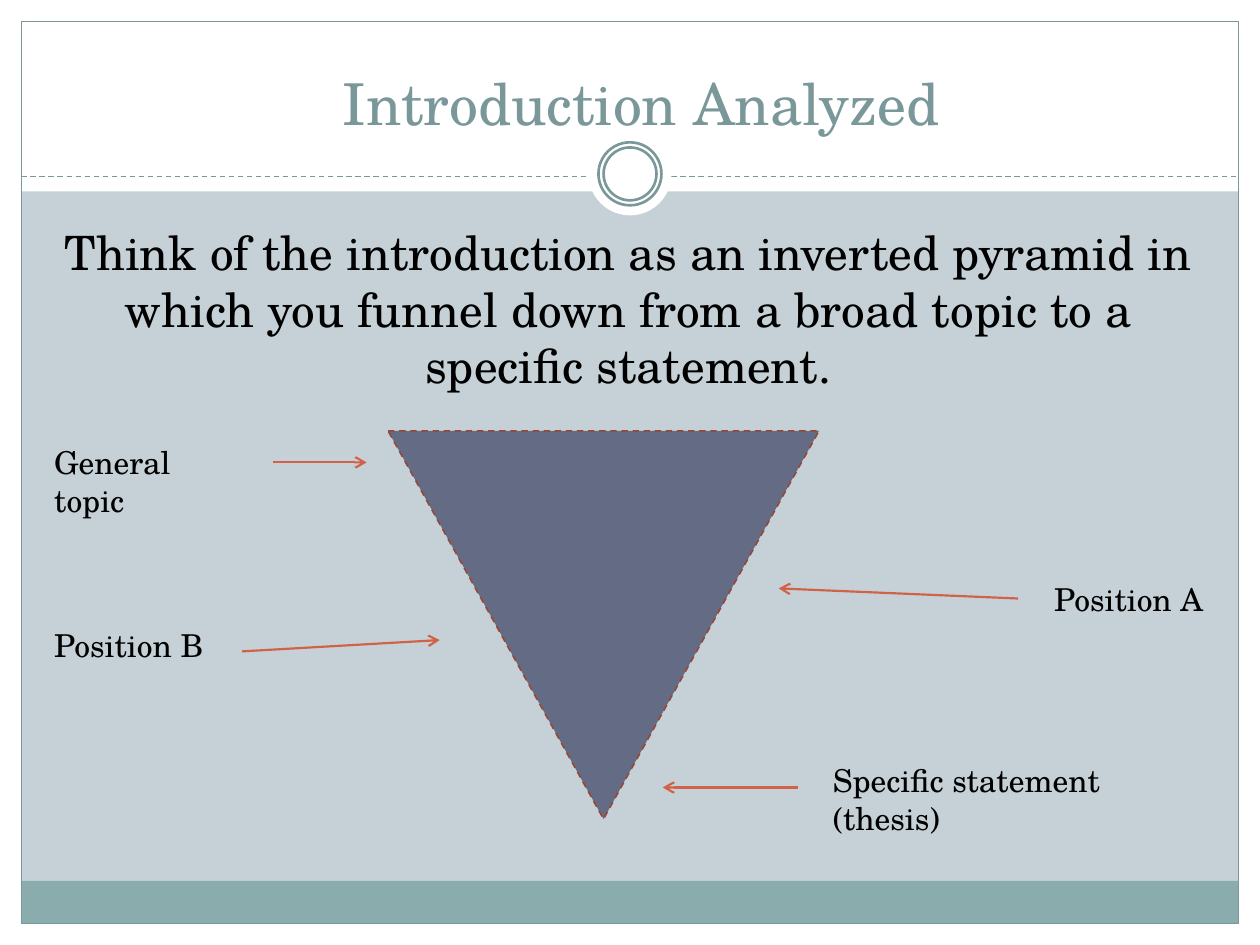
"""Build the slide that explains an introduction as an inverted pyramid."""
from lxml import etree
from pptx import Presentation
from pptx import util as u
from pptx.dml.color import RGBColor
from pptx.enum import dml, shapes, text
from pptx.oxml.ns import qn

TEAL = RGBColor(0x7A, 0x97, 0x99)
FOOTER = RGBColor(0x8B, 0xAC, 0xAD)
PANEL = RGBColor(0xC5, 0xD1, 0xD6)
SLATE = RGBColor(0x63, 0x6B, 0x85)
RUST = RGBColor(0x99, 0x46, 0x33)
ORANGE = RGBColor(0xD1, 0x62, 0x48)
WHITE = RGBColor(0xFF, 0xFF, 0xFF)
BLACK = RGBColor(0x00, 0x00, 0x00)
FONT = "TeX Gyre Schola"

deck = Presentation()
deck.slide_width, deck.slide_height = u.Inches(10), u.Inches(7.5)
page = deck.slides.add_slide(deck.slide_layouts[6])


def add_shape(kind, place, fill=None, line=None, weight=0.75, dash=None):
    shape = page.shapes.add_shape(kind, *map(u.Inches, place))
    shape.shadow.inherit = False
    if fill is None:
        shape.fill.background()
    else:
        shape.fill.solid()
        shape.fill.fore_color.rgb = fill
    if line is None:
        shape.line.fill.background()
    else:
        shape.line.color.rgb = line
        shape.line.width = u.Pt(weight)
        shape.line.dash_style = dash


def add_line(start, end, color, weight):
    line = page.shapes.add_connector(
        shapes.MSO_CONNECTOR.STRAIGHT, *map(u.Inches, start + end))
    line.line.color.rgb = color
    line.line.width = u.Pt(weight)
    etree.SubElement(line._element.spPr, qn("a:effectLst"))
    return line


kinds = shapes.MSO_SHAPE
add_shape(kinds.RECTANGLE, (0.17, 1.52, 9.66, 5.47), fill=PANEL)
add_shape(kinds.RECTANGLE, (0.17, 6.99, 9.66, 0.34), fill=FOOTER)
add_shape(kinds.RECTANGLE, (0.17, 0.17, 9.66, 7.16), line=TEAL)
divider = add_line((0.17, 1.4), (9.83, 1.4), TEAL, 0.75)
divider.line.dash_style = dml.MSO_LINE.DASH

for size, line in ((0.66, None), (0.5, TEAL), (0.42, TEAL)):
    place = (5 - size / 2, 1.38 - size / 2, size, size)
    add_shape(kinds.OVAL, place, fill=WHITE, line=line, weight=1.5)

add_shape(kinds.FLOWCHART_MERGE, (3.08, 3.42, 3.42, 3.08), fill=SLATE,
          line=RUST, weight=0.9, dash=dml.MSO_LINE.DASH)

arrows = [
    ((2.17, 3.67), (2.91, 3.67)),
    ((8.08, 4.75), (6.18, 4.67)),
    ((1.92, 5.17), (3.49, 5.08)),
    ((6.33, 6.25), (5.26, 6.25)),
]
for start, end in arrows:
    arrow = add_line(start, end, ORANGE, 1.25)
    etree.SubElement(arrow.line._get_or_add_ln(), qn("a:tailEnd"), type="arrow")

LEFT, CENTER, RIGHT = (
    text.PP_ALIGN.LEFT, text.PP_ALIGN.CENTER, text.PP_ALIGN.RIGHT)
statement = ("Think of the introduction as an inverted pyramid in which you "
             "funnel down from a broad topic to a specific statement.")
texts = [
    ("Introduction Analyzed", (2.72, 0.54, 6.52, 0.49), 33, TEAL, LEFT),
    (statement, (0.5, 1.77, 8.97, 1.36), 27, BLACK, CENTER),
    ("General topic", (0.43, 3.52, 1.3, 0.6), 18, BLACK, LEFT),
    ("Position A", (7.95, 4.6, 1.6, 0.3), 18, BLACK, RIGHT),
    ("Position B", (0.43, 4.97, 1.45, 0.3), 18, BLACK, LEFT),
    ("Specific statement (thesis)", (6.61, 6.04, 2.6, 0.6), 18, BLACK, LEFT),
]
frame_format = {"word_wrap": True, "margin_left": 0, "margin_top": 0,
                "margin_right": 0, "margin_bottom": 0}
for words, place, size, color, align in texts:
    box = page.shapes.add_textbox(*map(u.Inches, place))
    for name, value in frame_format.items():
        setattr(box.text_frame, name, value)
    para = box.text_frame.paragraphs[0]
    para.alignment = align
    span = para.add_run()
    span.text = words
    for name, value in {"name": FONT, "size": u.Pt(size)}.items():
        setattr(span.font, name, value)
    span.font.color.rgb = color

deck.save("out.pptx")
